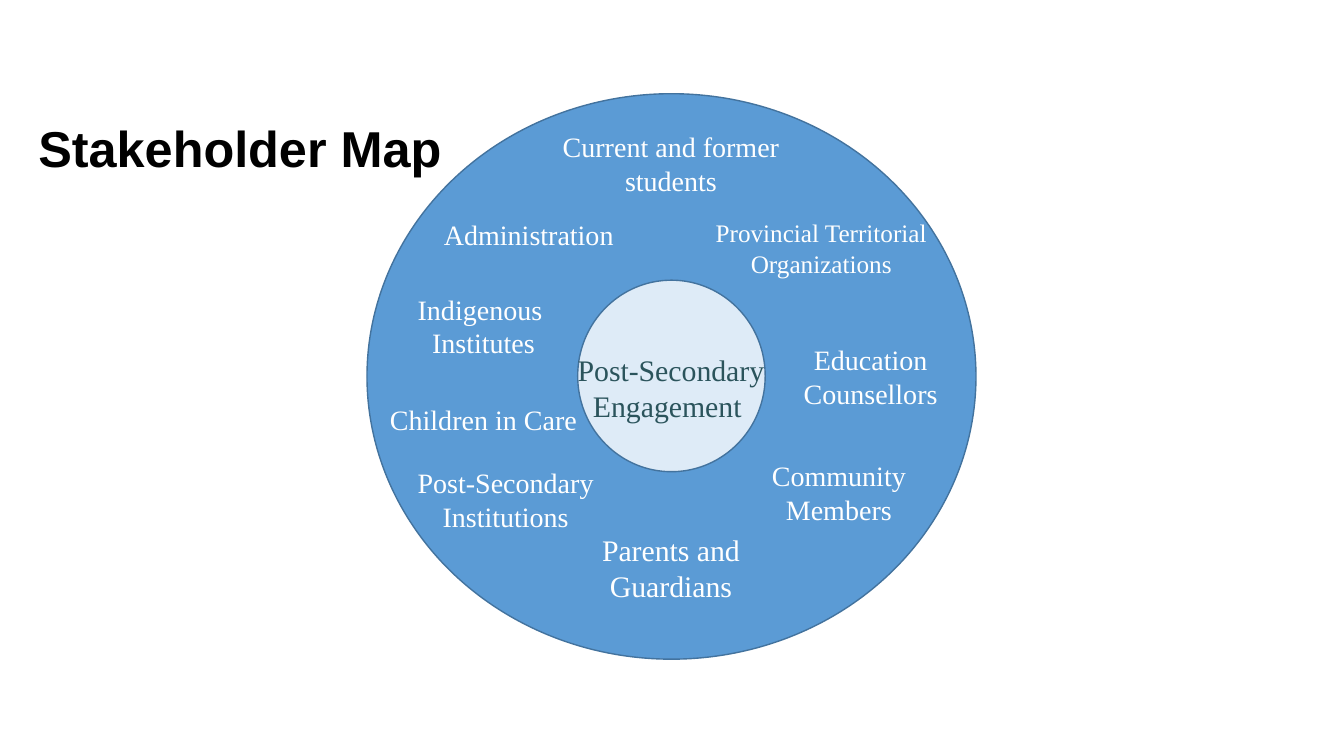
"""Builds the stakeholder map slide."""
from dataclasses import dataclass

from pptx import Presentation
from pptx.dml.color import RGBColor
from pptx.enum.shapes import MSO_SHAPE
from pptx.enum.text import MSO_ANCHOR, MSO_AUTO_SIZE, PP_ALIGN
from pptx.util import Emu, Pt

EMU_PER_PX = 9144


@dataclass(frozen=True)
class Theme:
    heading_font: str = "Arial"
    label_font: str = "Times New Roman"
    heading: str = "000000"
    ring: str = "5B9BD5"
    core: str = "DEEBF7"
    outline: str = "43739E"
    label: str = "FFFFFF"
    core_label: str = "2B545C"
    heading_size: float = 36
    large: float = 21.3
    medium: float = 20
    small: float = 18


class SlideBuilder:
    def __init__(self, slide, theme):
        self.slide = slide
        self.theme = theme

    def box(self, *lengths):
        return [Emu(n * EMU_PER_PX) for n in lengths]

    def run(self, p, text, font, size, color, bold=False):
        r = p.add_run()
        r.text = text
        r.font.name = font
        r.font.size = Pt(size)
        r.font.bold = bold
        r.font.color.rgb = RGBColor.from_string(color)

    def title(self, text, x, y, w, h):
        sp = self.slide.shapes.title
        sp.left, sp.top, sp.width, sp.height = self.box(x, y, w, h)
        tf = sp.text_frame
        tf.word_wrap = True
        tf.auto_size = MSO_AUTO_SIZE.NONE
        tf.vertical_anchor = MSO_ANCHOR.TOP
        p = tf.paragraphs[0]
        p.alignment = PP_ALIGN.LEFT
        p.line_spacing = 0.9
        t = self.theme
        self.run(p, text, t.heading_font, t.heading_size, t.heading, True)

    def ellipse(self, fill, x, y, w, h):
        sp = self.slide.shapes.add_shape(MSO_SHAPE.OVAL, *self.box(x, y, w, h))
        sp.shadow.inherit = False
        sp.fill.solid()
        sp.fill.fore_color.rgb = RGBColor.from_string(fill)
        sp.line.color.rgb = RGBColor.from_string(self.theme.outline)
        sp.line.width = Pt(1)

    def label(self, lines, size, color, x, y, w, h):
        tf = self.slide.shapes.add_textbox(*self.box(x, y, w, h)).text_frame
        tf.word_wrap = True
        tf.auto_size = MSO_AUTO_SIZE.SHAPE_TO_FIT_TEXT
        for i, line in enumerate(lines):
            p = tf.add_paragraph() if i else tf.paragraphs[0]
            p.alignment = PP_ALIGN.CENTER
            self.run(p, line, self.theme.label_font, size, color)


def main():
    prs = Presentation()
    prs.slide_width = Emu(1333 * EMU_PER_PX)
    prs.slide_height = Emu(750 * EMU_PER_PX)
    theme = Theme()
    s = SlideBuilder(prs.slides.add_slide(prs.slide_layouts[5]), theme)

    s.title("Stakeholder Map", 28, 118, 867, 85)
    s.ellipse(theme.ring, 364, 93, 604, 561)
    s.ellipse(theme.core, 573, 278, 186, 190)

    stakeholders = [
        (["Current and former students"], theme.medium, 528, 124, 275, 77),
        (["Provincial Territorial Organizations"], theme.small, 677, 211, 275, 71),
        (["Education Counsellors"], theme.medium, 738, 335, 251, 77),
        (["Community Members"], theme.medium, 716, 450, 232, 77),
        (["Parents and Guardians"], theme.large, 528, 523, 275, 82),
        (["Post-Secondary Institutions"], theme.medium, 364, 457, 275, 77),
        (["Children in Care"], theme.medium, 342, 394, 275, 44),
        (["Indigenous ", "Institutes"], theme.medium, 342, 285, 275, 77),
        (["Administration"], theme.medium, 387, 211, 275, 44),
    ]
    for lines, size, *place in stakeholders:
        s.label(lines, size, theme.label, *place)
    s.label(["Post-Secondary Engagement "], theme.large, theme.core_label,
            546, 344, 239, 82)

    prs.save("out.pptx")


if __name__ == "__main__":
    main()
